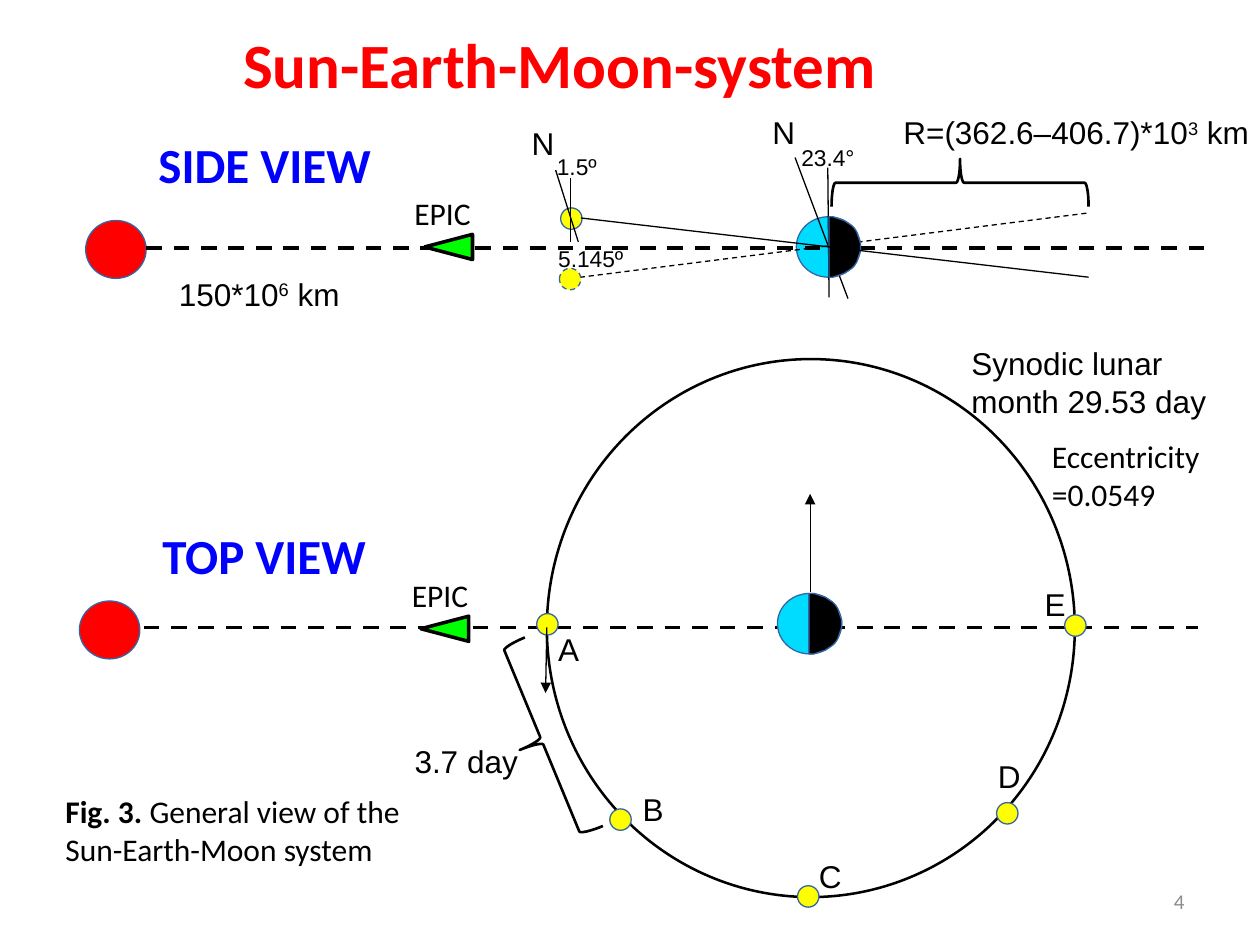
from math import cos, pi, sin

from lxml.etree import SubElement
from pptx import Presentation
from pptx.dml.color import RGBColor
from pptx.enum.dml import MSO_LINE
from pptx.enum.shapes import MSO_CONNECTOR, MSO_SHAPE as SHAPE
from pptx.enum.text import MSO_ANCHOR, MSO_AUTO_SIZE, PP_ALIGN
from pptx.oxml.ns import qn
from pptx.util import Emu, Pt

SCALE = 9144

RED = RGBColor(0xFF, 0x00, 0x00)
BLUE = RGBColor(0x00, 0x00, 0xFF)
CYAN = RGBColor(0x00, 0xDC, 0xFF)
YELLOW = RGBColor(0xFF, 0xFF, 0x00)
GREEN = RGBColor(0x00, 0xFF, 0x00)
BLACK = RGBColor(0x00, 0x00, 0x00)
GRAY = RGBColor(0x8C, 0x8C, 0x8C)
OUTLINE = RGBColor(0x34, 0x65, 0xA4)


def px(n):
    return Emu(round(n * SCALE))


def paint(sp, fill, line, width):
    sp.shadow.inherit = False
    if fill is None:
        sp.fill.background()
    else:
        sp.fill.solid()
        sp.fill.fore_color.rgb = fill
    sp.line.color.rgb = line
    sp.line.width = Pt(width)


def add_shape(slide, kind, box, fill=None, line=BLACK, width=1.5, rotation=0):
    sp = slide.shapes.add_shape(kind, *map(px, box))
    paint(sp, fill, line, width)
    sp.rotation = rotation
    return sp


def add_disc(slide, box, fill):
    return add_shape(slide, SHAPE.OVAL, box, fill, OUTLINE, 0.75)


def add_moon(slide, x, y):
    return add_disc(slide, (x, y, 17, 17), YELLOW)


def add_night(slide, x, y, w, h, steps=24):
    cx, cy = x + w / 2, y + h / 2
    angles = [pi * i / steps for i in range(steps + 1)]
    points = [(cx + w / 2 * sin(a), cy - h / 2 * cos(a)) for a in angles]
    builder = slide.shapes.build_freeform(*points[0], scale=SCALE)
    builder.add_line_segments(points[1:], close=True)
    paint(builder.convert_to_shape(), BLACK, OUTLINE, 0.75)


def add_line(slide, start, end, width=0.75, dashed=False, arrow=False):
    line = slide.shapes.add_connector(MSO_CONNECTOR.STRAIGHT, *map(px, start + end))
    line.line.color.rgb = BLACK
    line.line.width = Pt(width)
    if dashed:
        line.line.dash_style = MSO_LINE.DASH
    if arrow:
        SubElement(line.line._get_or_add_ln(), qn("a:tailEnd"), type="triangle")
    SubElement(line._element.spPr, qn("a:effectLst"))


def write(tf, paragraphs, size, font, color=BLACK, bold=False):
    for i, runs in enumerate(paragraphs):
        p = tf.paragraphs[0] if i == 0 else tf.add_paragraph()
        for text, style in runs:
            r = p.add_run()
            r.text = text
            r.font.size = Pt(size)
            r.font.name = font
            r.font.color.rgb = color
            r.font.bold = bold or style == "bold"
            if style == "super":
                r._r.get_or_add_rPr().set("baseline", "30000")


def plain(*lines):
    return [[(line, None)] for line in lines]


def add_text(slide, box, paragraphs, size=18, font="Calibri", color=BLACK,
             bold=False, wrap=False):
    tf = slide.shapes.add_textbox(*map(px, box)).text_frame
    tf.word_wrap = wrap
    write(tf, paragraphs, size, font, color, bold)
    return tf


def add_label(slide, box, paragraphs, size=18, wrap=False):
    tf = add_text(slide, box, paragraphs, size, "Arial", wrap=wrap)
    tf.margin_left = tf.margin_right = px(9)
    tf.margin_top = tf.margin_bottom = px(4)


def add_title(slide):
    sp = slide.shapes.title
    sp.left, sp.top, sp.width, sp.height = map(px, (183, 15, 528, 71))
    tf = sp.text_frame
    tf.word_wrap = False
    tf.auto_size = MSO_AUTO_SIZE.NONE
    tf.vertical_anchor = MSO_ANCHOR.TOP
    write(tf, plain("Sun-Earth-Moon-system"), 36, "Calibri", RED, True)
    tf.paragraphs[0].alignment = PP_ALIGN.LEFT


def add_sunline(slide, sun_x, sun_y, start, end):
    add_disc(slide, (sun_x, sun_y, 48, 46), RED)
    add_line(slide, start, end, 2.25, dashed=True)


def add_epic(slide, x, y, label_x, label_y):
    add_shape(slide, SHAPE.ISOSCELES_TRIANGLE, (x, y, 20, 38), GREEN, width=2, rotation=270)
    add_text(slide, (label_x, label_y, 65, 40), plain("EPIC"))


def add_side_view(slide):
    earth = (632, 172, 51, 48)
    add_disc(slide, earth, CYAN)
    add_moon(slide, 445, 165)
    add_line(slide, (453, 221), (864, 169), dashed=True)
    add_line(slide, (631, 125), (673, 237))
    add_sunline(slide, 68, 175, (116, 197), (958, 197))
    add_line(slide, (657, 133), (658, 236))
    add_night(slide, *earth)
    add_line(slide, (461, 173), (864, 220))
    add_moon(slide, 444, 213).line.dash_style = MSO_LINE.DASH
    add_line(slide, (441, 135), (459, 192))
    add_line(slide, (453, 141), (453, 192))
    add_shape(slide, SHAPE.RIGHT_BRACE, (743, 43, 38, 204), rotation=270)
    add_epic(slide, 346, 177, 319, 149)

    for x, y, text in ((627, 110, "23.4°"), (434, 190, "5.145º"), (433, 117, "1.5º")):
        add_label(slide, (x, y, 87, 30), plain(text), 13)
    for x, y in ((604, 86), (413, 94)):
        add_label(slide, (x, y, 34, 48), plain("N"), wrap=True)
    add_label(slide, (708, 86, 308, 41),
              [[("R=(362.6–406.7)*10", None), ("3", "super"), (" km", None)]], wrap=True)
    add_label(slide, (133, 214, 180, 36),
              [[("150*10", None), ("6", "super"), (" km", None)]])
    add_text(slide, (116, 102, 190, 57), plain("SIDE VIEW"), 28, color=BLUE, bold=True)


def add_top_view(slide):
    add_sunline(slide, 63, 477, (114, 498), (951, 498))
    add_shape(slide, SHAPE.OVAL, (434, 285, 419, 427), width=1.45)
    positions = (
        ("A", 426, 487, 434, 496),
        ("B", 484, 642, 501, 623),
        ("C", 633, 703, 641, 676),
        ("D", 791, 637, 783, 597),
        ("E", 845, 488, 820, 460),
    )
    for name, x, y, label_x, label_y in positions:
        add_moon(slide, x, y)
        add_label(slide, (label_x, label_y, 34, 36), plain(name))
    add_line(slide, (643, 470), (643, 392), arrow=True)
    add_line(slide, (434, 498), (433, 550), arrow=True)
    earth = (617, 471, 51, 48)
    add_disc(slide, earth, CYAN)
    add_night(slide, *earth)
    add_shape(slide, SHAPE.RIGHT_BRACE, (411, 507, 38, 162), rotation=157.5)
    add_epic(slide, 343, 480, 317, 452)

    add_label(slide, (762, 269, 238, 87), plain("Synodic lunar month 29.53 day"), wrap=True)
    add_label(slide, (320, 585, 123, 38), plain("3.7 day"), wrap=True)
    add_text(slide, (825, 342, 138, 71), plain("Eccentricity", "=0.0549"))
    add_text(slide, (119, 412, 183, 57), plain("TOP VIEW"), 28, color=BLUE, bold=True)


def add_caption(slide):
    add_text(slide, (42, 624, 288, 71),
             [[("Fig. 3. ", "bold"), ("General view of the", None)],
              [("Sun-Earth-Moon system", None)]])


def add_page_number(slide):
    tf = add_text(slide, (717, 695, 233, 40), plain("4"), 12, color=GRAY, wrap=True)
    tf.vertical_anchor = MSO_ANCHOR.MIDDLE
    tf.paragraphs[0].alignment = PP_ALIGN.RIGHT


def main():
    prs = Presentation()
    prs.slide_width, prs.slide_height = px(1000), px(750)
    slide = prs.slides.add_slide(prs.slide_layouts[5])
    add_title(slide)
    add_side_view(slide)
    add_top_view(slide)
    add_caption(slide)
    add_page_number(slide)
    prs.save("out.pptx")


if __name__ == "__main__":
    main()
